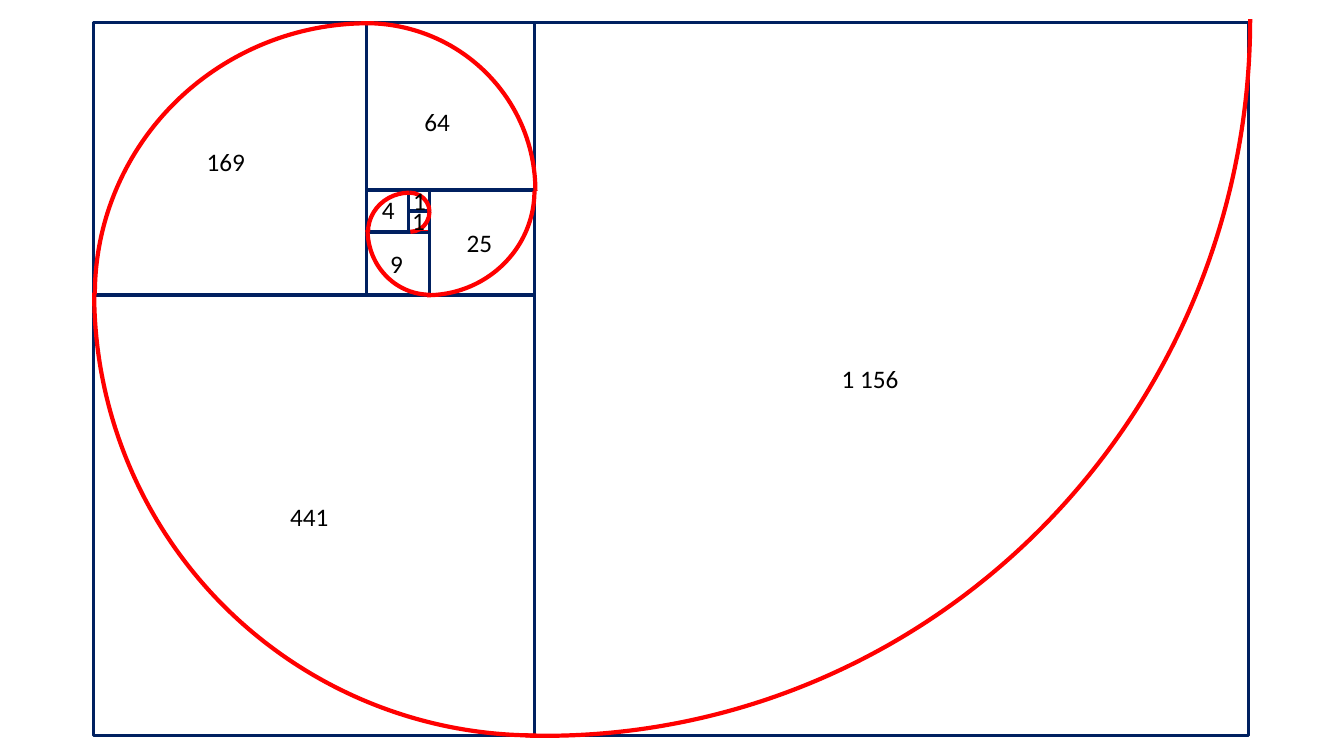
import dataclasses
import typing

import pptx
import pptx.dml.color
import pptx.enum.shapes
import pptx.enum.text
import pptx.util

SLIDE_WIDTH, SLIDE_HEIGHT = 13.33, 7.5
SPIRAL_LEFT, SPIRAL_TOP = 0.93, 0.22
UNIT = 7.08 / 34
LABEL_ROWS = 1.94
NAVY, RED, WHITE, BLACK = "002060", "FF0000", "FFFFFF", "000000"
PRESET = pptx.enum.shapes.MSO_SHAPE


class Area(typing.NamedTuple):
    column: float
    row: float
    columns: float
    rows: float

    def inches(self) -> list[int]:
        lengths = (
            SPIRAL_LEFT + self.column * UNIT,
            SPIRAL_TOP + self.row * UNIT,
            self.columns * UNIT,
            self.rows * UNIT,
        )
        return [pptx.util.Inches(length) for length in lengths]


@dataclasses.dataclass
class FibonacciSquare:
    side: int
    column: int
    row: int
    arc: Area
    label: Area
    outline: str = NAVY


SQUARES = [
    FibonacciSquare(1, 15, 9, Area(14.17, 8.07, 1.82, 1.92), Area(14.69, 8.5, 1.68, LABEL_ROWS), RED),
    FibonacciSquare(1, 15, 8, Area(14.12, 8.07, 1.82, 1.92), Area(14.74, 7.54, 1.68, LABEL_ROWS)),
    FibonacciSquare(2, 13, 8, Area(13.06, 8.12, 3.94, 3.75), Area(13.25, 7.97, 1.68, LABEL_ROWS)),
    FibonacciSquare(3, 13, 10, Area(12.92, 6.92, 6.19, 5.95), Area(13.64, 10.56, 1.68, LABEL_ROWS)),
    FibonacciSquare(5, 16, 8, Area(10.76, 3.07, 10.23, 9.94), Area(17.29, 9.56, 2.4, LABEL_ROWS)),
    FibonacciSquare(8, 13, 0, Area(4.95, -0.05, 15.99, 16.18), Area(15.27, 3.79, 2.79, LABEL_ROWS)),
    FibonacciSquare(13, 0, 0, Area(0.05, 0.05, 26.03, 25.84), Area(4.9, 5.67, 3.27, LABEL_ROWS)),
    FibonacciSquare(21, 0, 13, Area(0, -8.16, 42.16, 42.12), Area(8.88, 22.57, 3.27, LABEL_ROWS)),
    FibonacciSquare(34, 21, 0, Area(-12.1, -34.29, 67.18, 68.29), Area(35.15, 16.04, 4.66, LABEL_ROWS)),
]


def colour(hex_code: str) -> pptx.dml.color.RGBColor:
    return pptx.dml.color.RGBColor.from_string(hex_code)


def draw_outline(slide, preset, area: Area, line: str, width: float):
    figure = slide.shapes.add_shape(preset, *area.inches())
    figure.shadow.inherit = False
    figure.line.color.rgb = colour(line)
    figure.line.width = pptx.util.Pt(width)
    return figure


def draw_square(slide, square: FibonacciSquare) -> None:
    area = Area(square.column, square.row, square.side, square.side)
    tile = draw_outline(slide, PRESET.RECTANGLE, area, square.outline, 2.25)
    tile.fill.solid()
    tile.fill.fore_color.rgb = colour(WHITE)


def draw_arc(slide, area: Area, quarter_turns: int):
    arc = draw_outline(slide, PRESET.ARC, area, RED, 3)
    arc.fill.background()
    arc.rotation = -90 * quarter_turns % 360
    arc.element.spPr.xfrm.set("flipV", "1")
    return arc


def draw_label(slide, square: FibonacciSquare) -> None:
    label = slide.shapes.add_textbox(*square.label.inches())
    label.text_frame.word_wrap = True
    label.text_frame.auto_size = pptx.enum.text.MSO_AUTO_SIZE.SHAPE_TO_FIT_TEXT
    paragraph = label.text_frame.paragraphs[0]
    paragraph.text = f"{square.side ** 2:,}".replace(",", " ")
    paragraph.font.name = "Calibri"
    paragraph.font.size = pptx.util.Pt(18)
    paragraph.font.color.rgb = colour(BLACK)


def main() -> None:
    presentation = pptx.Presentation()
    presentation.slide_width = pptx.util.Inches(SLIDE_WIDTH)
    presentation.slide_height = pptx.util.Inches(SLIDE_HEIGHT)
    slide = presentation.slides.add_slide(presentation.slide_layouts[6])
    for square in SQUARES:
        draw_square(slide, square)
    arcs = [draw_arc(slide, square.arc, turn) for turn, square in enumerate(SQUARES)]
    arcs[-1].adjustments[0] = 161.07
    arcs[-1].adjustments[1] = 0
    for square in SQUARES:
        draw_label(slide, square)
    presentation.save("out.pptx")


if __name__ == "__main__":
    main()
